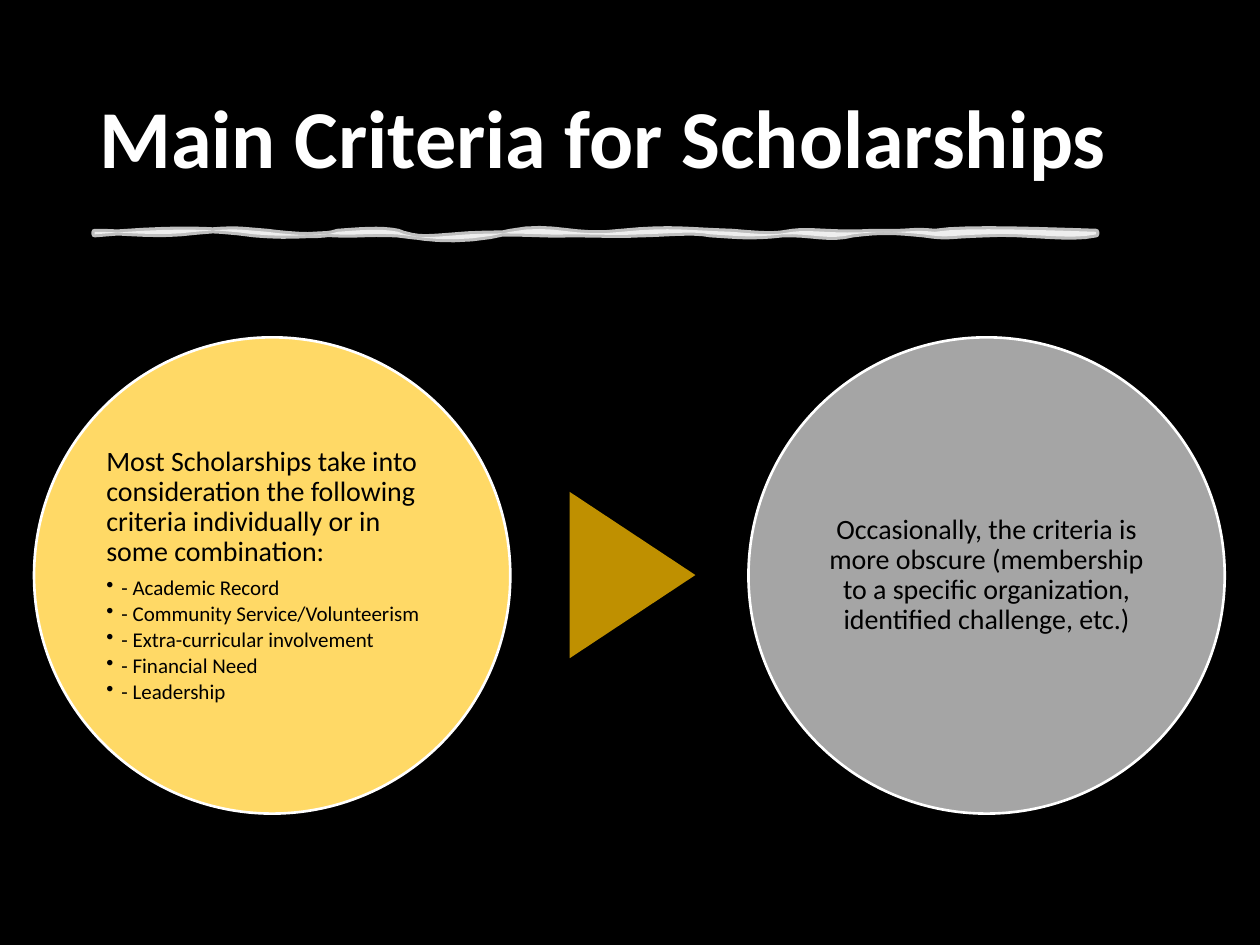
from math import sqrt
from lxml import etree
from pptx import Presentation
from pptx.dml.color import RGBColor
from pptx.enum.shapes import MSO_SHAPE
from pptx.enum.text import MSO_ANCHOR, PP_ALIGN
from pptx.oxml.ns import qn
from pptx.util import Inches, Pt

OVAL = MSO_SHAPE.OVAL
TRIANGLE = MSO_SHAPE.ISOSCELES_TRIANGLE
MIDDLE = MSO_ANCHOR.MIDDLE
LEFT, CENTER = PP_ALIGN.LEFT, PP_ALIGN.CENTER

WIDTH, HEIGHT = Inches(10), Inches(7.5)
FONT = "Calibri"
BLACK, WHITE = "000000", "FFFFFF"
YELLOW, GOLD, GRAY = "FFD966", "BF9000", "A5A5A5"

# Brush edges in thousandths of the slide width: each curve holds its first
# control point, its second control point and its end x on the edge's level.
TOP_LEVEL, BOTTOM_LEVEL, BRUSH_START = 184, 186, 75
TOP_EDGE = [
    (101, 184, 124, 188, 155), (189, 181, 186, 182, 212),
    (235, 187, 257, 188, 268), (283, 183, 302, 181, 316),
    (323, 188, 363, 195, 405), (440, 177, 455, 189, 493),
    (534, 180, 546, 183, 581), (615, 187, 616, 186, 629),
    (645, 182, 661, 186, 694), (725, 185, 721, 182, 742),
    (766, 180, 836, 183, 870),
]
BOTTOM_EDGE = [
    (848, 191, 814, 184, 782), (750, 187, 753, 189, 733),
    (711, 184, 701, 183, 677), (658, 191, 643, 185, 621),
    (596, 189, 582, 187, 564), (550, 183, 524, 186, 508),
    (490, 187, 474, 186, 452), (430, 187, 414, 184, 371),
    (332, 189, 340, 189, 315), (289, 185, 280, 187, 267),
    (252, 185, 235, 189, 202), (166, 181, 133, 181, 75),
]
CURVE_STEPS = 8

CRITERIA = ["Academic Record", "Community Service/Volunteerism",
            "Extra-curricular involvement", "Financial Need", "Leadership"]


def color(value):
    return RGBColor.from_string(value)


def share_box(left, top, width, height):
    """Turn percentages of the slide's size into a box."""
    return [round(part * size / 100) for part, size in
            zip((left, top, width, height), (WIDTH, HEIGHT, WIDTH, HEIGHT))]


def set_opacity(fill, percent):
    for color_element in fill._xPr.iter(qn("a:srgbClr")):
        alpha = etree.SubElement(color_element, qn("a:alpha"))
        alpha.set("val", str(percent * 1000))


def style_shape(shape, fill, line=None, line_width=1.5):
    shape.shadow.inherit = False
    shape.fill.solid()
    shape.fill.fore_color.rgb = color(fill)
    if line:
        shape.line.color.rgb = color(line)
        shape.line.width = Pt(line_width)
    else:
        shape.line.fill.background()


def add_bullet(paragraph, indent):
    paragraph.level = 1
    properties = paragraph._p.get_or_add_pPr()
    properties.set("marL", str(indent))
    properties.set("indent", str(-indent))
    etree.SubElement(properties, qn("a:buChar")).set("char", "•")


def add_paragraph(frame, text, size, text_color=BLACK, bold=False,
                  align=LEFT, space_after=0, bullet=False):
    first = frame.paragraphs[0]
    paragraph = frame.add_paragraph() if first.runs else first
    paragraph.alignment = align
    paragraph.line_spacing = 0.9
    paragraph.space_before = Pt(0)
    paragraph.space_after = Pt(space_after)
    if bullet:
        add_bullet(paragraph, Inches(0.12))
    run = paragraph.add_run()
    run.text = text
    run.font.name, run.font.size, run.font.bold = FONT, Pt(size), bold
    run.font.color.rgb = color(text_color)


def add_frame(slide, box, margin=None):
    frame = slide.shapes.add_textbox(*box).text_frame
    frame.word_wrap = True
    frame.vertical_anchor = MIDDLE
    if margin is not None:
        frame.margin_left = frame.margin_right = margin
        frame.margin_top = frame.margin_bottom = margin
    return frame


def add_title(slide, box):
    add_paragraph(add_frame(slide, box), "Main Criteria for Scholarships",
                  47, text_color=WHITE, bold=True)


def edge_points(start_x, level, curves):
    """Sample a chain of cubic curves whose ends all lie on one level."""
    for x1, y1, x2, y2, end_x in curves:
        for step in range(CURVE_STEPS + 1):
            t = step / CURVE_STEPS
            weights = ((1 - t) ** 3, 3 * t * (1 - t) ** 2,
                       3 * t * t * (1 - t), t ** 3)
            yield tuple(sum(w * v for w, v in zip(weights, values)) for values
                        in ((start_x, x1, x2, end_x), (level, y1, y2, level)))
        start_x = end_x


def add_brush_underline(slide, unit):
    brush_end = TOP_EDGE[-1][-1]
    points = [*edge_points(BRUSH_START, TOP_LEVEL, TOP_EDGE),
              *edge_points(brush_end, BOTTOM_LEVEL, BOTTOM_EDGE)]
    points = [(round(x * unit), round(y * unit)) for x, y in points]
    builder = slide.shapes.build_freeform(*points[0])
    builder.add_line_segments(points[1:], close=True)
    brush = builder.convert_to_shape()
    style_shape(brush, WHITE, WHITE, 3.5)
    set_opacity(brush.fill, 75)


def add_circle(slide, box, fill):
    """Draw a circle and return the text frame of its inscribed square."""
    style_shape(slide.shapes.add_shape(OVAL, *box), fill, WHITE)
    left, top, width, height = box
    side = 1 / sqrt(2)
    inset = (1 - side) / 2
    square = [round(length) for length in
              (left + width * inset, top + height * inset,
               width * side, height * side)]
    return add_frame(slide, square, Inches(0.02))


def add_common_criteria(slide, box):
    frame = add_circle(slide, box, YELLOW)
    add_paragraph(frame, "Most Scholarships take into consideration the "
                  "following criteria individually or in some combination:",
                  16, space_after=5.6)
    for criterion in CRITERIA:
        add_paragraph(frame, f"- {criterion}", 12, space_after=1.8, bullet=True)


def add_arrow(slide, box):
    arrow = slide.shapes.add_shape(TRIANGLE, *box)
    arrow.rotation = 90
    style_shape(arrow, GOLD)


def add_rare_criteria(slide, box):
    frame = add_circle(slide, box, GRAY)
    add_paragraph(frame, "Occasionally, the criteria is more obscure "
                  "(membership to a specific organization, identified "
                  "challenge, etc.)", 16, align=CENTER, space_after=5.6)


def main():
    presentation = Presentation()
    presentation.slide_width, presentation.slide_height = WIDTH, HEIGHT
    slide = presentation.slides.add_slide(presentation.slide_layouts[6])
    slide.background.fill.solid()
    slide.background.fill.fore_color.rgb = color(BLACK)

    add_title(slide, share_box(6.9, 5.33, 86.2, 19.33))
    add_brush_underline(slide, WIDTH / 1000)
    add_common_criteria(slide, share_box(2.7, 35.7, 37.8, 50.4))
    add_arrow(slide, share_box(43.6, 54.2, 13.2, 13.3))
    add_rare_criteria(slide, share_box(59.4, 35.7, 37.8, 50.4))
    presentation.save("out.pptx")


if __name__ == "__main__":
    main()
